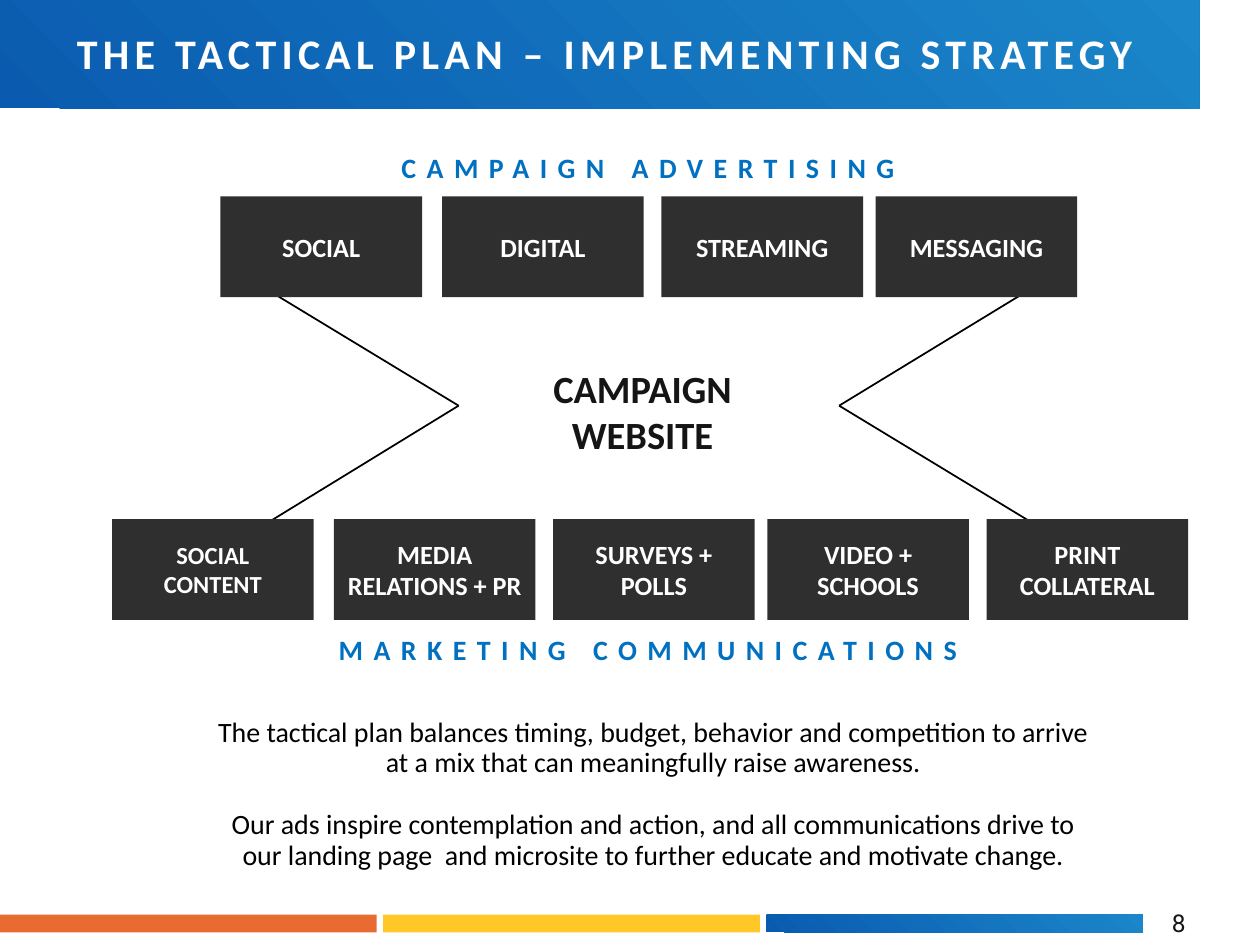
import pptx
import pptx.util
import pptx.dml.color
import pptx.enum.shapes
import pptx.enum.text
import pptx.oxml.ns
from lxml import etree

Inches, Pt = pptx.util.Inches, pptx.util.Pt
ALIGN = pptx.enum.text.PP_ALIGN
ANCHOR = pptx.enum.text.MSO_ANCHOR

# Content
TITLE = "THE TACTICAL PLAN – IMPLEMENTING STRATEGY"
HEADINGS = [("CAMPAIGN ADVERTISING", 1.14), ("MARKETING COMMUNICATIONS", 4.96)]
HUB = ["CAMPAIGN", "WEBSITE"]
# Each row: top, then (left, lines, text size)
ROWS = [
    (1.56, [(1.75, ["SOCIAL"], 15), (3.51, ["DIGITAL"], 15),
            (5.25, ["STREAMING"], 15), (6.95, ["MESSAGING"], 15)]),
    (4.12, [(0.89, ["SOCIAL", "CONTENT"], 14), (2.65, ["MEDIA RELATIONS + PR"], 15),
            (4.39, ["SURVEYS +", "POLLS"], 15), (6.09, ["VIDEO +", "SCHOOLS"], 15),
            (7.83, ["PRINT", "COLLATERAL"], 15)]),
]
SUMMARY = [
    "The tactical plan balances timing, budget, behavior and competition to arrive "
    "at a mix that can meaningfully raise awareness.",
    "Our ads inspire contemplation and action, and all communications drive to "
    "our landing page  and microsite to further educate and motivate change.",
]
PAGE = "8"
COLORS = {"light": "1B86CA", "dark": "0A5BAF", "yellow": "FFC728", "orange": "E86C31",
          "box": "2F2F2F", "white": "FFFFFF", "ink": "161515", "black": "000000",
          "heading": "0070C0"}

# Layout
BOX_W, BOX_H = 1.6, 0.8
TIP_Y = 3.22
ARROWS = [(3.64, (1.76, 1.78)), (6.66, (8.53, 8.54))]  # tip x, (top x, bottom x)
LINE_ENDS = (2.08, 4.36)
BAR_W, BAR_STEP = 2.99, 3.04


def rgb(name):
    return pptx.dml.color.RGBColor.from_string(COLORS[name])


def write(sp, lines, size, color, inset=0.06, bold=True, align=ALIGN.CENTER,
          font="Calibri", wrap=True, anchor=ANCHOR.MIDDLE, spacing=0, **para):
    tf = sp.text_frame
    frame = {"word_wrap": wrap, "vertical_anchor": anchor,
             "auto_size": pptx.enum.text.MSO_AUTO_SIZE.NONE}
    for side in ("left", "top", "right", "bottom"):
        frame["margin_" + side] = Inches(inset)
    for key, value in frame.items():
        setattr(tf, key, value)
    for i, line in enumerate(lines):
        p = tf.paragraphs[0] if i == 0 else tf.add_paragraph()
        p.alignment = align
        for key, value in para.items():
            if i or key != "space_before":
                setattr(p, key, value)
        r = p.add_run()
        r.text = line
        for key, value in {"name": font, "size": Pt(size), "bold": bold}.items():
            setattr(r.font, key, value)
        r.font.color.rgb = rgb(color)
        if spacing:
            r.font._element.set("spc", str(spacing * 100))


def add_text(left, top, width, height, *args, **kwargs):
    sp = slide.shapes.add_textbox(*map(Inches, (left, top, width, height)))
    write(sp, *args, **kwargs)


def add_rect(left, top, width, height, color=None):
    """A plain rectangle; without a colour it takes the blue gradient."""
    sp = slide.shapes.add_shape(pptx.enum.shapes.MSO_SHAPE.RECTANGLE,
                                *map(Inches, (left, top, width, height)))
    sp.shadow.inherit = False
    sp.line.fill.background()
    if color:
        sp.fill.solid()
        sp.fill.fore_color.rgb = rgb(color)
    else:
        sp.fill.gradient()
        sp.fill.gradient_angle = 45
        for stop, name in zip(sp.fill.gradient_stops, ("dark", "light")):
            stop.color.rgb = rgb(name)
    return sp


prs = pptx.Presentation()
prs.slide_width, prs.slide_height = Inches(10), Inches(7.5)
slide = prs.slides.add_slide(prs.slide_layouts[5])

# Lines from the outer boxes to the hub
for tip_x, ends in ARROWS:
    for x, y in zip(ends, LINE_ENDS):
        line = slide.shapes.add_connector(pptx.enum.shapes.MSO_CONNECTOR.STRAIGHT,
                                          *map(Inches, (x, y, tip_x, TIP_Y)))
        line.line.color.rgb = rgb("black")
        line.line.width = Pt(1)
        etree.SubElement(line._element.spPr, pptx.oxml.ns.qn("a:effectLst"))

# Footer bars and page number
for i, color in enumerate(("orange", "yellow", None)):
    add_rect(i * BAR_STEP, 7.26, BAR_W, 0.14, color)
add_text(9.19, 7.15, 0.28, 0.35, [PAGE], 14, "ink", bold=False, font="Roboto",
         align=ALIGN.RIGHT, wrap=False)

# Channel boxes
for top, boxes in ROWS:
    for left, lines, size in boxes:
        write(add_rect(left, top, BOX_W, BOX_H, "box"), lines, size, "white", inset=0.07)

# Hub, row headings and summary
add_text(3.92, 2.84, 2.36, 0.85, HUB, 22, "ink")
for text, top in HEADINGS:
    add_text(1.75, top, 6.79, 0.38, [text], 16, "heading", spacing=6)
add_text(1.69, 5.65, 6.99, 1.34, SUMMARY, 16, "black", inset=0.04, bold=False,
         anchor=ANCHOR.TOP, line_spacing=Pt(17.6), space_before=Pt(17.6))

# Title on its band, brought in front of it
band = add_rect(0, 0, 9.52, 0.86)
title = slide.shapes.title
title.left, title.top, title.width, title.height = map(Inches, (0.54, 0.15, 8.7, 0.54))
write(title, [TITLE], 24, "white", inset=0.07, align=ALIGN.LEFT, wrap=False, spacing=3)
band._element.addnext(title._element)

prs.save("out.pptx")
